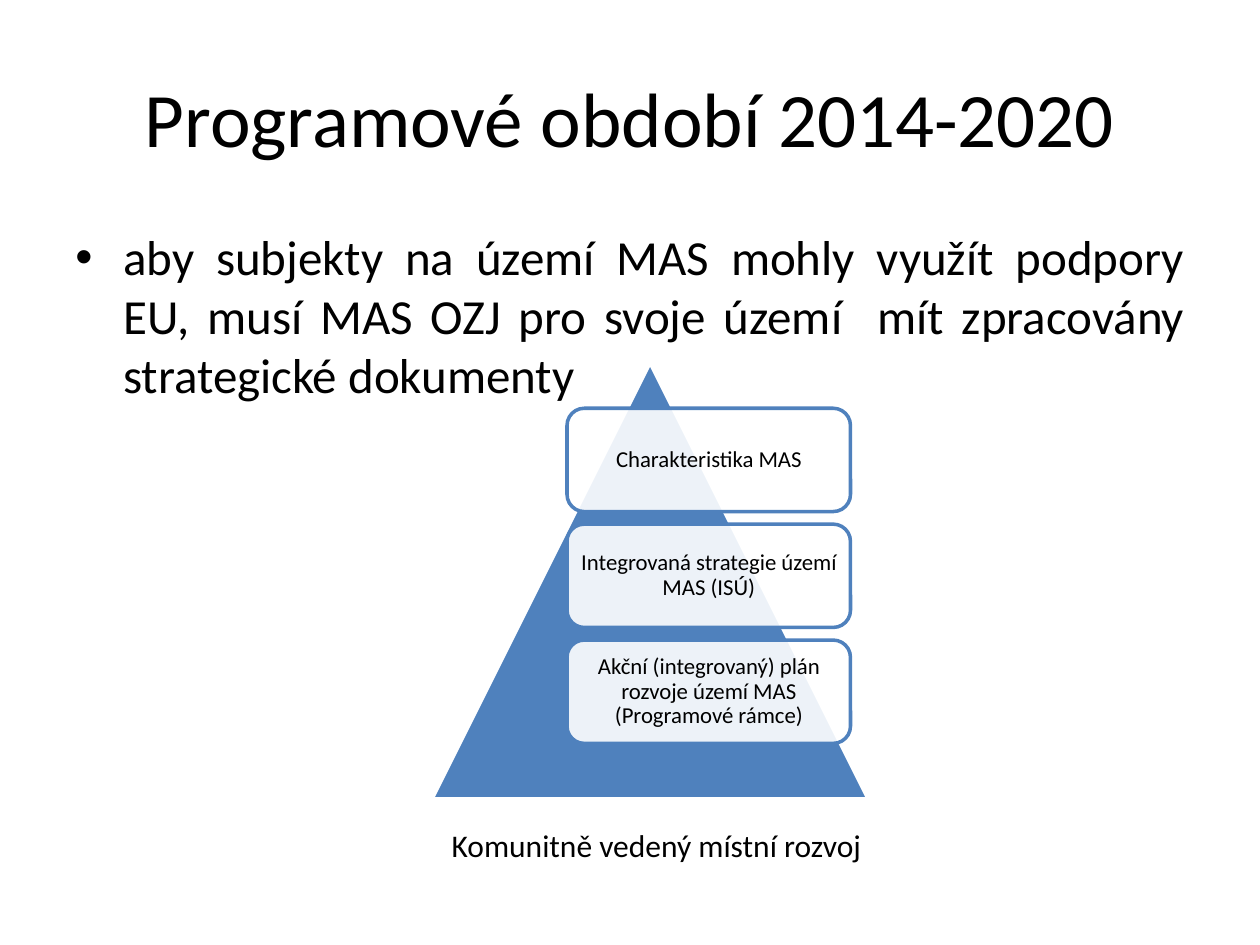
from dataclasses import dataclass

from lxml import etree
from pptx import Presentation
from pptx.dml.color import RGBColor
from pptx.enum import shapes, text
from pptx.oxml.ns import qn
from pptx.util import Emu, Pt

PX = 9144  # EMU per px, 100 px to the inch


@dataclass(frozen=True)
class Theme:
    font: str = "Calibri"
    ink: str = "000000"
    paper: str = "FFFFFF"
    accent: str = "4F81BD"
    title: int = 44
    body: int = 28
    caption: int = 18
    label: int = 13
    line: int = 2
    card_opacity: int = 90


THEME = Theme()


def px(*lengths):
    return [Emu(length * PX) for length in lengths]


def write(frame, words, size, align, anchor=text.MSO_ANCHOR.TOP, insets=(10, 5)):
    """Fill a text frame with one paragraph and return the paragraph."""
    frame.word_wrap = True
    frame.vertical_anchor = anchor
    side, end = px(*insets)
    frame.margin_left = frame.margin_right = side
    frame.margin_top = frame.margin_bottom = end
    para = frame.paragraphs[0]
    para.alignment = align
    span = para.add_run()
    span.text = words
    span.font.size = Pt(size)
    span.font.name = THEME.font
    span.font.color.rgb = RGBColor.from_string(THEME.ink)
    return para


def add_text(page, box, *args, **options):
    return write(page.shapes.add_textbox(*px(*box)).text_frame, *args, **options)


def add_figure(page, kind, box, fill, line, opacity=100):
    shape = page.shapes.add_shape(kind, *px(*box))
    shape.shadow.inherit = False
    shape.fill.solid()
    shape.fill.fore_color.rgb = RGBColor.from_string(fill)
    shape.line.color.rgb = RGBColor.from_string(line)
    shape.line.width = Pt(THEME.line)
    if opacity < 100:
        color = shape.fill._xPr.find(qn("a:solidFill"))[0]
        etree.SubElement(color, qn("a:alpha"), val=str(opacity * 1000))
    return shape


def add_title(page, box, words):
    add_text(page, box, words, THEME.title, text.PP_ALIGN.CENTER,
             anchor=text.MSO_ANCHOR.MIDDLE)


def add_bullet(page, box, words, indent=38):
    para = add_text(page, box, words, THEME.body, text.PP_ALIGN.JUSTIFY)
    props = para._p.get_or_add_pPr()
    props.set("marL", str(indent * PX))
    props.set("indent", str(-indent * PX))
    etree.SubElement(props, qn("a:buFont"), typeface="Arial")
    etree.SubElement(props, qn("a:buChar"), char="•")


def add_pyramid(page, box, labels):
    left, top, width, height = box
    add_figure(page, shapes.MSO_SHAPE.ISOSCELES_TRIANGLE, box, THEME.accent, THEME.paper)

    # Cards stacked down the right side of the triangle
    card_left, card_top, pitch = left + 107, top + 36, 92
    for row, label in enumerate(labels):
        card = add_figure(page, shapes.MSO_SHAPE.ROUNDED_RECTANGLE,
                          (card_left, card_top + row * pitch, 225, 82),
                          THEME.paper, THEME.accent, THEME.card_opacity)
        para = write(card.text_frame, label, THEME.label, text.PP_ALIGN.CENTER,
                     anchor=text.MSO_ANCHOR.MIDDLE, insets=(1, 1))
        para.line_spacing = 0.9


def add_caption(page, box, words):
    add_text(page, box, words, THEME.caption, text.PP_ALIGN.LEFT)


def main():
    deck = Presentation()
    deck.slide_width, deck.slide_height = px(1000, 750)
    page = deck.slides.add_slide(deck.slide_layouts[6])

    add_title(page, (50, 30, 900, 125), "Programové období 2014-2020")
    add_bullet(page, (50, 175, 900, 495),
               "aby subjekty na území MAS mohly využít podpory EU, musí MAS OZJ "
               "pro svoje území  mít zpracovány strategické dokumenty")
    add_pyramid(page, (343, 288, 346, 346), [
        "Charakteristika MAS",
        "Integrovaná strategie území MAS (ISÚ)",
        "Akční (integrovaný) plán rozvoje území MAS (Programové rámce)",
    ])
    add_caption(page, (343, 651, 378, 40), " Komunitně vedený místní rozvoj")

    deck.save("out.pptx")


if __name__ == "__main__":
    main()
